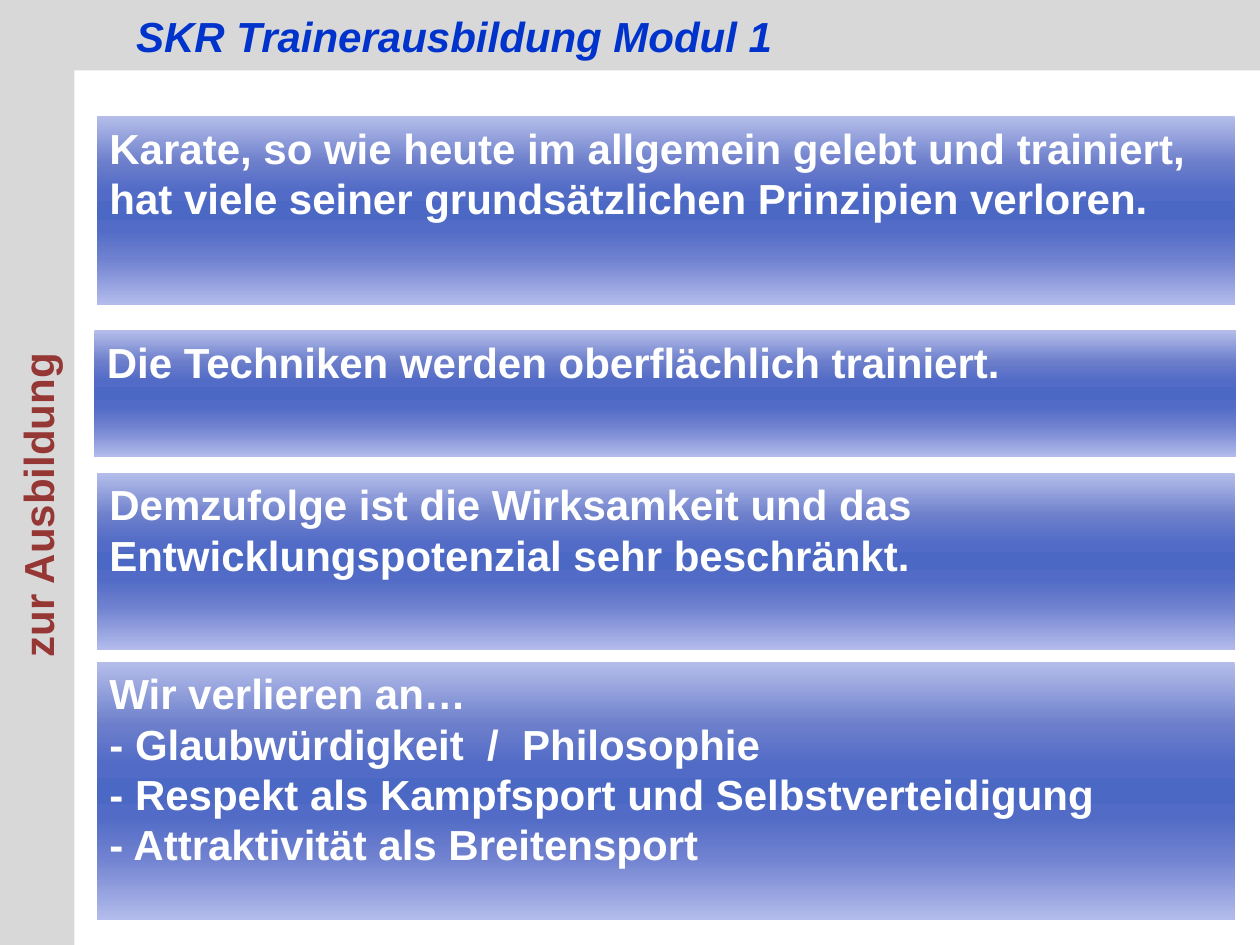
from lxml import etree
from pptx import Presentation
from pptx.dml.color import RGBColor
from pptx.enum.shapes import MSO_SHAPE as Shape
from pptx.enum.text import MSO_ANCHOR as Anchor, PP_ALIGN as Align
from pptx.oxml.ns import qn
from pptx.util import Inches, Pt

COLORS = {"band": "D8D8D8", "title": "0033CC", "topic": "953734", "text": "FFFFFF"}
GRADIENT = {0: "B5BEEA", 25: "6C7ECB", 40: "516BC6", 50: "4C68C5",
            60: "516BC6", 75: "6E80CF", 100: "B3BCEC"}
FONT = "Arial"

# left, top, width, height in inches; "\v" is a line break
STATEMENTS = [
    ((0.77, 0.92, 9.03, 1.5),
     "Karate, so wie heute im allgemein gelebt und trainiert, "
     "hat viele seiner grundsätzlichen Prinzipien verloren."),
    ((0.75, 2.62, 9.06, 1.01), "Die Techniken werden oberflächlich trainiert."),
    ((0.77, 3.75, 9.03, 1.41),
     "Demzufolge ist die Wirksamkeit und das Entwicklungspotenzial sehr beschränkt."),
    ((0.77, 5.25, 9.03, 2.05),
     "Wir verlieren an…\v- Glaubwürdigkeit  /  Philosophie\v"
     "- Respekt als Kampfsport und Selbstverteidigung\v"
     "- Attraktivität als Breitensport"),
]


def write_text(shape, text, color="text", italic=False, align=Align.LEFT,
               anchor=Anchor.TOP, wrap=True):
    frame = shape.text_frame
    frame.word_wrap = wrap
    frame.vertical_anchor = anchor
    frame.margin_left = frame.margin_right = Inches(0.1)
    frame.margin_top = frame.margin_bottom = Inches(0.05)
    para = frame.paragraphs[0]
    para.text = text
    para.alignment = align
    for span in para.runs:
        span.font.name = FONT
        span.font.size = Pt(24)
        span.font.bold = True
        span.font.italic = italic
        span.font.color.rgb = RGBColor.from_string(COLORS[color])


def add_box(page, box):
    shape = page.shapes.add_shape(Shape.RECTANGLE, *map(Inches, box))
    shape.shadow.inherit = False
    shape.line.fill.background()
    return shape


def add_band(page, box):
    band = add_box(page, box)
    band.fill.solid()
    band.fill.fore_color.rgb = RGBColor.from_string(COLORS["band"])
    return band


def fill_gradient(shape):
    """Fill from top to bottom with the stops in GRADIENT."""
    shape.fill.gradient()
    shape.fill.gradient_angle = 270
    stops = shape.element.spPr.find(".//" + qn("a:gsLst"))
    for stop in list(stops):
        stops.remove(stop)
    for percent, color in GRADIENT.items():
        stop = etree.SubElement(stops, qn("a:gs"), pos=str(percent * 1000))
        etree.SubElement(stop, qn("a:srgbClr"), val=color)


def add_header(page, box, text):
    left, top, _, _ = box
    add_band(page, box)
    title = page.shapes.title
    title.left, title.top = Inches(left + 0.98), Inches(top + 0.03)
    title.width, title.height = Inches(5.3), Inches(0.5)
    title.element.getparent().append(title.element)  # in front of the band
    write_text(title, text, color="title", italic=True, wrap=False)


def add_sidebar(page, box, text):
    """Fill the upright box with a band whose text reads upwards."""
    left, top, width, height = box
    shift = (height - width) / 2
    band = add_band(page, (left - shift, top + shift, height, width))
    band.rotation = 270
    write_text(band, text, color="topic", align=Align.CENTER, anchor=Anchor.MIDDLE)


def add_statement(page, box, text):
    panel = add_box(page, box)
    fill_gradient(panel)
    write_text(panel, text)


def main():
    deck = Presentation()
    deck.slide_width, deck.slide_height = Inches(10), Inches(7.5)
    page = deck.slides.add_slide(deck.slide_layouts.get_by_name("Title Only"))
    add_header(page, (0, 0, 10, 0.56), "SKR Trainerausbildung Modul 1")
    add_sidebar(page, (0, 0.52, 0.59, 6.98), "zur Ausbildung")
    for box, text in STATEMENTS:
        add_statement(page, box, text)
    deck.save("out.pptx")


if __name__ == "__main__":
    main()
